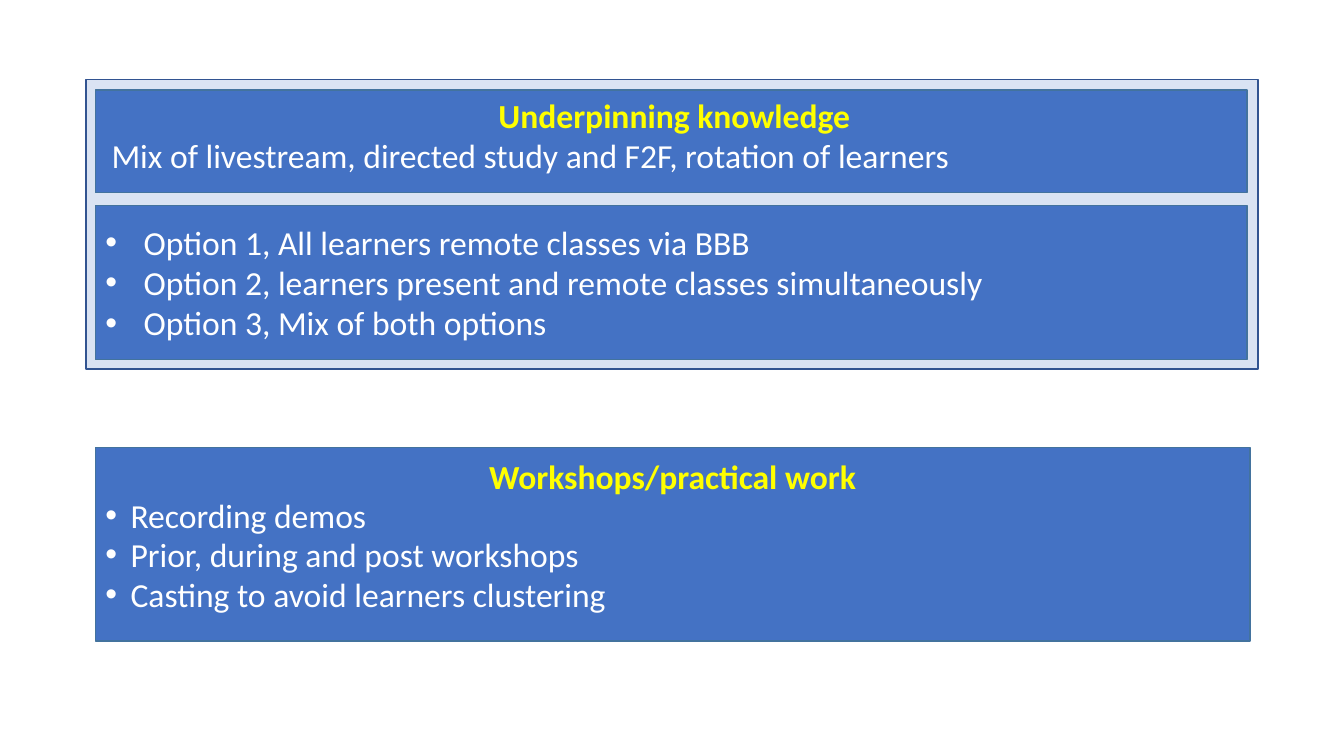
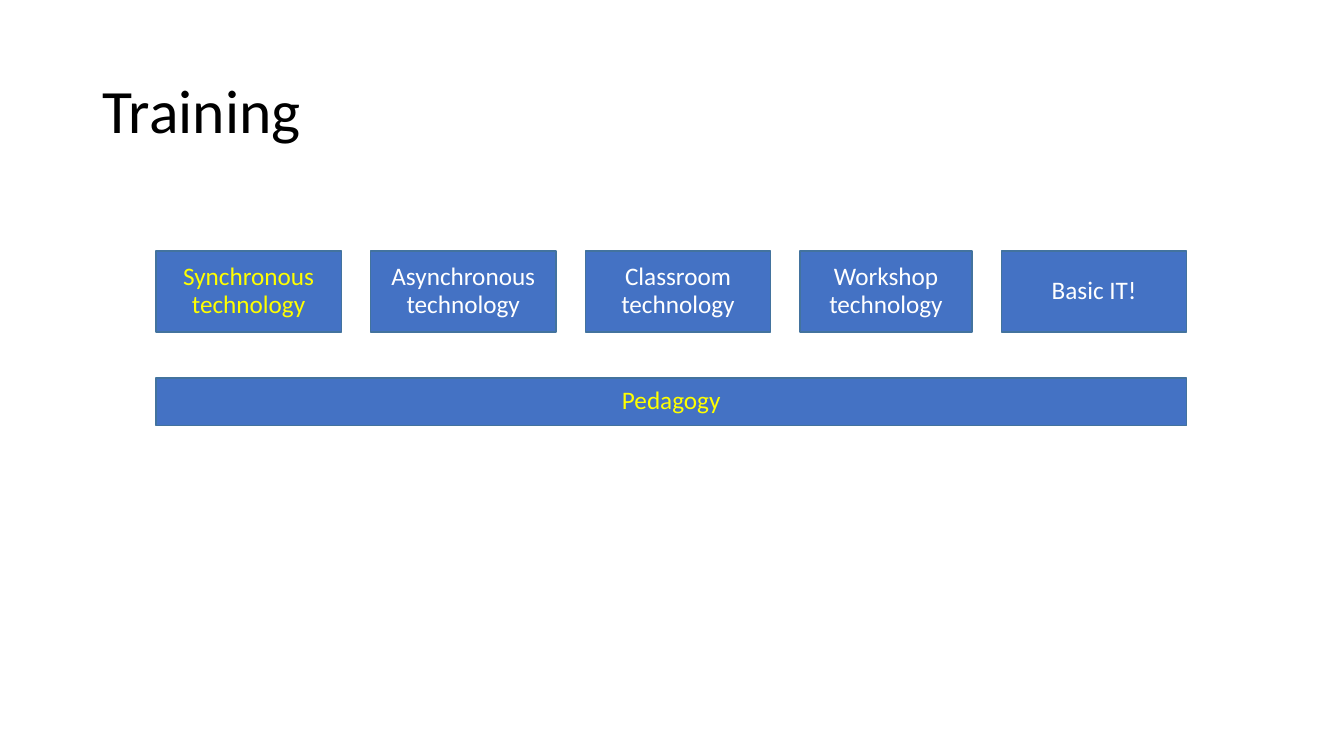
import pptx
import pptx.util
import pptx.dml.color
import pptx.enum.text
import pptx.enum.shapes
import pptx.oxml.ns
import lxml.etree

RGB = pptx.dml.color.RGBColor
BLUE = RGB(0x44, 0x72, 0xC4)
EDGE = RGB(0x43, 0x73, 0x9E)
PALE = RGB(0xDA, 0xE3, 0xF3)
NAVY = RGB(0x32, 0x54, 0x91)
GOLD = RGB(0xFF, 0xFF, 0x00)
WHITE = RGB(0xFF, 0xFF, 0xFF)
BLACK = RGB(0x00, 0x00, 0x00)

Inch = pptx.util.Inches
Pt = pptx.util.Pt
LEFT = pptx.enum.text.PP_ALIGN.LEFT
MID = pptx.enum.text.PP_ALIGN.CENTER
TOP = pptx.enum.text.MSO_ANCHOR.TOP
CORE = pptx.enum.text.MSO_ANCHOR.MIDDLE
SIDES = ("left", "top", "right", "bottom")


class Deck:
    """Hold the shared style and the current slide; places are percent of the slide."""

    def __init__(self):
        self.show = pptx.Presentation()
        self.show.slide_width = Inch(13.333)
        self.show.slide_height = Inch(7.5)

    def page(self):
        self.slide = self.show.slides.add_slide(self.show.slide_layouts[6])

    def place(self, left, top, width, height):
        wide, high = self.show.slide_width / 100, self.show.slide_height / 100
        return int(left * wide), int(top * high), int(width * wide), int(height * high)

    def box(self, spot, fill=BLUE, edge=EDGE):
        kind = pptx.enum.shapes.MSO_SHAPE.RECTANGLE
        shape = self.slide.shapes.add_shape(kind, *self.place(*spot))
        shape.shadow.inherit = False
        shape.fill.solid()
        shape.fill.fore_color.rgb = fill
        shape.line.color.rgb = edge
        shape.line.width = Pt(1)
        return shape

    def frame(self, shape, pads=(0.1, 0.05, 0.1, 0.05), anchor=CORE):
        frame = shape.text_frame
        frame.word_wrap = True
        frame.vertical_anchor = anchor
        for side, pad in zip(SIDES, pads):
            setattr(frame, "margin_" + side, Inch(pad))
        return frame

    def bullet(self, para, indent):
        props = para._p.get_or_add_pPr()
        props.set("marL", str(Inch(indent)))
        props.set("indent", str(-Inch(indent)))
        for tag, key, value in (("buFont", "typeface", "Arial"), ("buChar", "char", "•")):
            lxml.etree.SubElement(props, pptx.oxml.ns.qn("a:" + tag)).set(key, value)

    def lines(self, frame, texts, size, color=WHITE, bold=False, indent=0, **form):
        for text in texts:
            para = frame.paragraphs[0]
            if para.text:
                para = frame.add_paragraph()
            para.text = text
            if indent:
                self.bullet(para, indent)
            if para is not None and len(frame.paragraphs) == 1:
                form_now = {name: form[name] for name in form if name != "space_before"}
            else:
                form_now = form
            for name, value in form_now.items():
                setattr(para, name, value)
            face = {"name": "Calibri", "size": Pt(size), "bold": bold}
            for name, value in face.items():
                setattr(para.font, name, value)
            para.font.color.rgb = color

    def panel(self, spot, pads, texts, head=None, space=1.0, **form):
        frame = self.frame(self.box(spot), pads, TOP)
        if head:
            self.lines(frame, [head], 24, GOLD, True, alignment=MID, line_spacing=space)
        self.lines(frame, texts, 24, alignment=LEFT, line_spacing=space, **form)

    def label(self, spot, text, color=WHITE):
        frame = self.frame(self.box(spot))
        self.lines(frame, [text], 18, color, alignment=MID, line_spacing=0.9)

    def title(self, text):
        shape = self.slide.shapes.add_textbox(*self.place(6.9, 5.3, 86.2, 19.3))
        frame = self.frame(shape)
        self.lines(frame, [text], 44, BLACK, alignment=LEFT, line_spacing=0.9)


def study(deck):
    deck.page()
    deck.box((6.4, 10.5, 87.2, 38.3), PALE, NAVY)
    even = (0.1, 0.16, 0.1, 0.16)
    deck.panel((7.1, 59.2, 85.9, 25.6), even, [
        "Recording demos",
        "Prior, during and post workshops",
        "Casting to avoid learners clustering",
    ], "Workshops/practical work", 0.8, indent=0.25, space_before=Pt(5))
    deck.panel((7.1, 11.9, 85.7, 13.6), (0.16, 0.05, 0.1, 0.16), [
        "Mix of livestream, directed study and F2F, rotation of learners",
    ], "Underpinning knowledge")
    deck.panel((7.1, 27.2, 85.7, 20.4), even, [
        "Option 1, All learners remote classes via BBB",
        "Option 2, learners present and remote classes simultaneously",
        "Option 3, Mix of both options",
    ], indent=0.38)


def train(deck):
    deck.page()
    deck.title("Training")
    left, span = 11.6, 76.7
    topics = [
        ("Synchronous technology", 13.8, GOLD),
        ("Asynchronous technology", 13.8, WHITE),
        ("Classroom technology", 13.8, WHITE),
        ("Workshop technology", 12.8, WHITE),
        ("Basic IT!", 13.8, WHITE),
    ]
    gap = (span - sum(width for _, width, _ in topics)) / (len(topics) - 1)
    spot = left
    for text, width, color in topics:
        deck.label((spot, 33.2, width, 10.7), text, color)
        spot += width + gap
    deck.label((left, 50, span, 6.3), "Pedagogy", GOLD)


def main():
    deck = Deck()
    study(deck)
    train(deck)
    deck.show.save("out.pptx")


if __name__ == "__main__":
    main()
